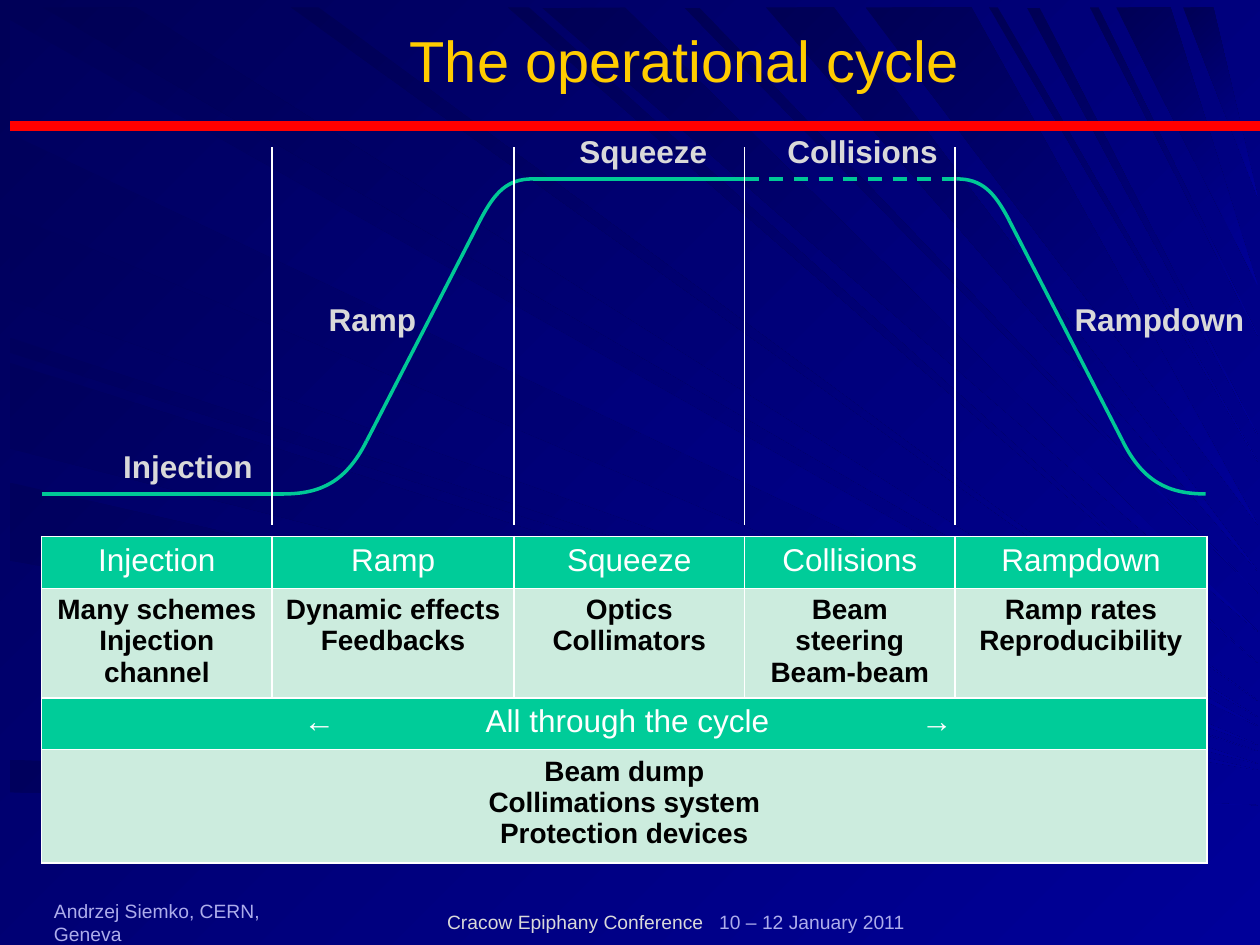
import pptx
import pptx.dml.color
import pptx.enum.dml
import pptx.enum.shapes
import pptx.enum.text
import pptx.oxml
import pptx.oxml.ns
import pptx.util
from pptx.util import Inches

COLORS = {"back_dark": "000058", "back_light": "000099", "ray_top": "000055", "ray_left": "00005D",
          "bar": "FF0000", "title": "FFCC00", "curve": "00C896", "label": "D9D9D9",
          "footer": "ADADEB", "white": "FFFFFF", "head": "00CC99", "cell": "CCECDE",
          "black": "000000"}
FONT = "Arial"
COLUMNS = [1.83, 1.92, 1.83, 1.67, 2]
PHASES = {"Injection": ["Many schemes", "Injection channel"],
          "Ramp": ["Dynamic effects", "Feedbacks"],
          "Squeeze": ["Optics", "Collimators"],
          "Collisions": ["Beam steering", "Beam-beam"],
          "Rampdown": ["Ramp rates", "Reproducibility"]}
LABELS = [("Injection", 0.55, 2.33, 1.24), ("Ramp", 2.18, 1.16, 0.9), ("Squeeze", 4.17, -0.17, 1.23),
          ("Collisions", 5.82, -0.17, 1.41), ("Rampdown", 8.1, 1.16, 1.56)]
LOWER_BEND = [(1.92, 2.75), (2.22, 2.75), (2.42, 2.65), (2.58, 2.33)]
UPPER_BEND = [(3.9, 0.25), (3.7, 0.25), (3.6, 0.35), (3.48, 0.58)]
LEFT_RAYS = [(0.1, 1, 5.7), (1.64, 2.32, 5.85), (2.62, 2.74, 5.9), (2.82, 3.5, 6),
             (3.77, 4.39, 6.05), (5.97, 6.23, 6.33)]
TOP_RAYS = [(0.34, 1.08, 5.63), (2.31, 2.53, 5.5), (4.03, 4.2, 5.2), (4.3, 4.96, 4.95),
            (5.43, 5.55, 4.65), (6.08, 6.62, 4.47), (6.87, 7.71, 4.1), (7.85, 7.92, 3.6),
            (8.15, 8.25, 3.39), (8.65, 8.72, 2.6), (8.86, 9.29, 2.2), (9.39, 9.63, 1.5)]


def rgb(value):
    """Turn a hex string into a colour."""
    return pptx.dml.color.RGBColor.from_string(value)


def paint_gradient(fill, start, end, angle):
    """Fill with a gradient at a clockwise angle."""
    fill.gradient()
    fill.gradient_angle = (360 - angle) % 360
    for stop, name in zip(fill.gradient_stops, (start, end)):
        stop.color.rgb = rgb(COLORS[name])


def style(p, size, color, bold=False):
    """Format every run of a paragraph."""
    for r in p.runs:
        r.font.name, r.font.size, r.font.bold = FONT, pptx.util.Pt(size), bold
        r.font.color.rgb = rgb(COLORS[color])


def add_tabs(p, stops):
    """Give a paragraph tab stops, each an alignment and a position in inches."""
    tabs = pptx.oxml.parse_xml(f'<a:tabLst {pptx.oxml.ns.nsdecls("a")}/>')
    for align, pos in stops:
        tabs.append(pptx.oxml.parse_xml(
            f'<a:tab {pptx.oxml.ns.nsdecls("a")} pos="{Inches(pos)}" algn="{align}"/>'))
    p._p.get_or_add_pPr().append(tabs)


def add_outline(slide, points, close):
    """Draw a freeform through points given in inches."""
    pts = [(Inches(x), Inches(y)) for x, y in points]
    builder = slide.shapes.build_freeform(*pts[0])
    builder.add_line_segments(pts[1:], close=close)
    sp = builder.convert_to_shape()
    sp.shadow.inherit = False
    return sp


def add_bend(slide, points):
    """Draw an open cubic curve from its four control points."""
    sp = add_outline(slide, points, False)
    sp.fill.background()
    sp.line.color.rgb, sp.line.width = rgb(COLORS["curve"]), pptx.util.Pt(2)
    path = sp._element.find(".//" + pptx.oxml.ns.qn("a:path"))
    cubic = pptx.oxml.parse_xml(f'<a:cubicBezTo {pptx.oxml.ns.nsdecls("a")}/>')
    for step in path.findall(pptx.oxml.ns.qn("a:lnTo")):
        cubic.append(step[0])
        path.remove(step)
    path.append(cubic)


def add_line(slide, start, end, color, width, dash=False):
    """Draw a straight line between two points in inches."""
    ends = [Inches(v) for v in (*start, *end)]
    line = slide.shapes.add_connector(pptx.enum.shapes.MSO_CONNECTOR.STRAIGHT, *ends)
    line.line.color.rgb, line.line.width = rgb(COLORS[color]), pptx.util.Pt(width)
    if dash:
        line.line.dash_style = pptx.enum.dml.MSO_LINE.DASH
    line._element.spPr.append(pptx.oxml.parse_xml(f'<a:effectLst {pptx.oxml.ns.nsdecls("a")}/>'))


def add_label(slide, text, box, size, color, bold=False):
    """Add an unwrapped line of text and return its paragraph."""
    tf = slide.shapes.add_textbox(*[Inches(v) for v in box]).text_frame
    tf.word_wrap = False
    tf.vertical_anchor = pptx.enum.text.MSO_ANCHOR.MIDDLE
    tf.text = text
    style(tf.paragraphs[0], size, color, bold)
    return tf.paragraphs[0]


def add_background(slide, x, y, w):
    """Paint the gradient and the rays that narrow towards the right edge."""
    paint_gradient(slide.background.fill, "back_dark", "back_light", 45)
    rays = [("ray_left", [(x, y + a), (x, y + b), (x + w, y + tip)]) for a, b, tip in LEFT_RAYS]
    rays += [("ray_top", [(a, y), (b, y), (x + w, y + tip)]) for a, b, tip in TOP_RAYS]
    for name, points in rays:
        sp = add_outline(slide, points, True)
        paint_gradient(sp.fill, name, "back_light", 45)
        sp.line.fill.background()


def add_title(slide, x, y, w, h):
    """Place the title above the red bar."""
    add_line(slide, (0.08, 1), (10, 1), "bar", 6)
    sp = slide.shapes.title
    slide.shapes._spTree.append(sp._element)
    sp.left, sp.top, sp.width, sp.height = [Inches(v) for v in (x, y, w, h)]
    tf = sp.text_frame
    tf.text = "The operational cycle"
    tf.auto_size = pptx.enum.text.MSO_AUTO_SIZE.NONE
    tf.vertical_anchor = pptx.enum.text.MSO_ANCHOR.MIDDLE
    tf.margin_left = tf.margin_right = tf.margin_top = tf.margin_bottom = 0
    p = tf.paragraphs[0]
    p.alignment, p.line_spacing = pptx.enum.text.PP_ALIGN.CENTER, 0.87
    style(p, 33, "title")


def add_cycle(slide, x, y, w, h):
    """Draw the cycle curve, its phase labels and the phase dividers."""
    edges = [x + sum(COLUMNS[:i]) for i in range(1, len(COLUMNS))]
    top, low = y + UPPER_BEND[0][1], y + LOWER_BEND[0][1]
    add_line(slide, (x, low), (x + LOWER_BEND[0][0], low), "curve", 2)
    add_line(slide, (x + UPPER_BEND[0][0], top), (edges[2], top), "curve", 2)
    add_line(slide, (edges[2], top), (edges[3], top), "curve", 2, dash=True)
    for mirrored in (False, True):
        lower, upper = [[(x + (w + 1.91 - px if mirrored else px), y + py) for px, py in bend]
                        for bend in (LOWER_BEND, UPPER_BEND)]
        add_bend(slide, lower)
        add_line(slide, lower[-1], upper[-1], "curve", 2)
        add_bend(slide, upper)
    for text, dx, dy, width in LABELS:
        add_label(slide, text, (x + dx, y + dy, width, 0.4), 18, "label", True)
    for edge in edges:
        add_line(slide, (edge, y), (edge, y + h), "white", 0.75)


def add_grid(slide, x, y, widths, heights, columns):
    """Add a table whose columns each hold a heading and a list of lines."""
    box = [Inches(v) for v in (x, y, sum(widths), sum(heights))]
    table = slide.shapes.add_table(2, len(widths), *box).table
    for row, height in zip(table.rows, heights):
        row.height = Inches(height)
    for i, (head, lines) in enumerate(columns.items()):
        table.columns[i].width = Inches(widths[i])
        for j, (text, fill, size, color) in enumerate(
                [(head, "head", 18, "white"), ("\n".join(lines), "cell", 16, "black")]):
            cell = table.cell(j, i)
            for side in "LRTB":
                cell._tc.get_or_add_tcPr().append(pptx.oxml.parse_xml(
                    f'<a:ln{side} {pptx.oxml.ns.nsdecls("a")} w="12700"><a:solidFill>'
                    f'<a:srgbClr val="{COLORS["white"]}"/></a:solidFill></a:ln{side}>'))
            cell.fill.solid()
            cell.fill.fore_color.rgb = rgb(COLORS[fill])
            cell.text_frame.text = text
            for p in cell.text_frame.paragraphs:
                p.alignment = pptx.enum.text.PP_ALIGN.CENTER
                style(p, size, color, j == 1)
    return table


def add_tables(slide, x, y):
    """Stack the table of phases and the table for the whole cycle."""
    add_grid(slide, x, y, COLUMNS, [0.41, 0.87], PHASES)
    whole = {"\t←\tAll through the cycle\t→":
             ["Beam dump", "Collimations system", "Protection devices"]}
    table = add_grid(slide, x, y + 1.28, [sum(COLUMNS)], [0.41, 0.9], whole)
    p = table.cell(0, 0).text_frame.paragraphs[0]
    p.alignment = pptx.enum.text.PP_ALIGN.LEFT
    add_tabs(p, [("l", 1.98), ("ctr", 4.55), ("l", 6.88)])


def add_footer(slide, x, y, h):
    """Write the author, the conference and its date."""
    add_label(slide, "Andrzej Siemko, CERN, Geneva", (x, y, 2.32, h), 11, "footer")
    p = add_label(slide, "Cracow Epiphany Conference", (x + 3.12, y, 4.5, h), 11, "label")
    add_tabs(p, [("l", 2.16)])
    r = p.add_run()
    r.text = "\t10 – 12 January 2011"
    r.font.name, r.font.size = FONT, pptx.util.Pt(11)
    r.font.color.rgb = rgb(COLORS["footer"])


def main():
    """Build the slide and save it."""
    prs = pptx.Presentation()
    prs.slide_width, prs.slide_height = Inches(10), Inches(7.5)
    slide = prs.slides.add_slide(prs.slide_layouts[5])
    add_background(slide, 0.08, 0.06, 9.9)
    add_title(slide, 1.14, 0, 8.58, 1.03)
    add_cycle(slide, 0.33, 1.17, sum(COLUMNS), 3)
    add_tables(slide, 0.33, 4.26)
    add_footer(slide, 0.33, 7.15, 0.34)
    prs.save("out.pptx")


if __name__ == "__main__":
    main()
